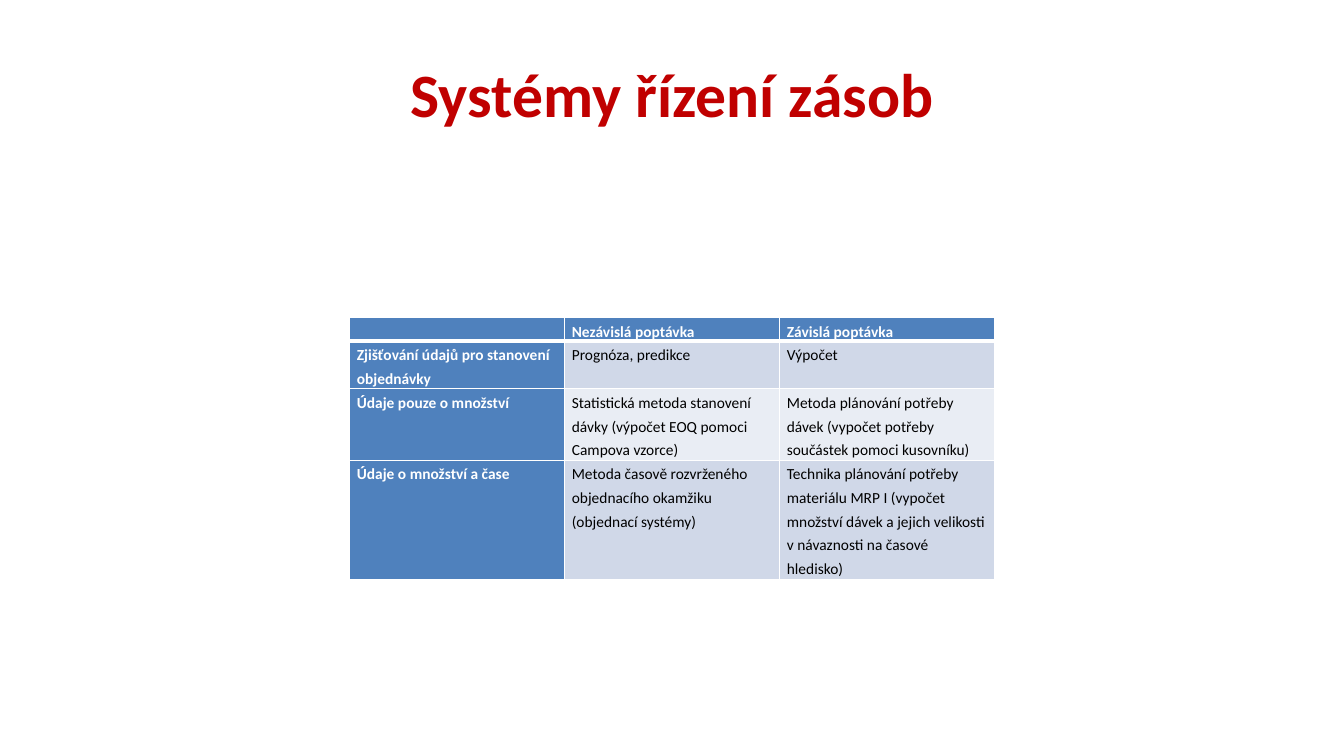
from lxml.etree import SubElement
from pptx import Presentation
from pptx.dml.color import RGBColor
from pptx.enum.text import MSO_ANCHOR as Anchor, PP_ALIGN as Align
from pptx.oxml.ns import qn
from pptx.util import Inches, Pt

FONT = "Calibri"
COLORS = {"title": "C00000", "header": "4F81BD", "odd": "D0D8E8",
          "even": "E9EDF4", "white": "FFFFFF", "black": "000000"}
LINE = 0.236  # height of one line of table text, in inches
ROW_LINES = [1, 2, 3, 5]
DEMAND = [
    ["", "Nezávislá poptávka", "Závislá poptávka"],
    ["Zjišťování údajů pro stanovení objednávky", "Prognóza, predikce", "Výpočet"],
    ["Údaje pouze o množství",
     "Statistická metoda stanovení dávky (výpočet EOQ pomoci Campova vzorce)",
     "Metoda plánování potřeby dávek (vypočet potřeby součástek pomoci kusovníku)"],
    ["Údaje o množství a čase",
     "Metoda časově rozvrženého objednacího okamžiku (objednací systémy)",
     "Technika plánování potřeby materiálu MRP I (vypočet množství dávek "
     "a jejich velikosti v návaznosti na časové hledisko)"],
]


def rgb(name):
    return RGBColor.from_string(COLORS[name])


def add_run(paragraph, text, size, color, bold):
    run = paragraph.add_run()
    run.text = text
    run.font.name, run.font.size, run.font.bold = FONT, Pt(size), bold
    run.font.color.rgb = rgb(color)


def add_title(slide, text, left, top, width, height):
    heading = slide.shapes.add_textbox(
        Inches(left), Inches(top), Inches(width), Inches(height)).text_frame
    heading.word_wrap = True
    heading.vertical_anchor = Anchor.MIDDLE
    heading.paragraphs[0].alignment = Align.CENTER
    add_run(heading.paragraphs[0], text, 44, "title", True)


def set_borders(cell, row):
    # A thick rule parts the header row from the body
    widths = {"L": 1, "R": 1, "T": 3 if row == 1 else 1, "B": 3 if row == 0 else 1}
    for side, width in widths.items():
        border = SubElement(cell._tc.get_or_add_tcPr(), qn(f"a:ln{side}"), w=str(Pt(width)))
        SubElement(SubElement(border, qn("a:solidFill")), qn("a:srgbClr"), val=COLORS["white"])


def fill_cell(cell, text, row, col):
    is_header = row == 0 or col == 0
    cell.margin_left = cell.margin_right = Inches(0.07)
    cell.margin_top = cell.margin_bottom = 0
    set_borders(cell, row)
    cell.fill.solid()
    cell.fill.fore_color.rgb = rgb("header" if is_header else "odd" if row % 2 else "even")
    paragraph = cell.text_frame.paragraphs[0]
    paragraph.line_spacing, paragraph.space_after = 1.25, Pt(10)
    if text:
        add_run(paragraph, text, 11, "white" if is_header else "black", is_header)
    else:
        # Keeps the empty corner cell as low as its row
        SubElement(paragraph._p, qn("a:endParaRPr"), sz="1100")


def add_demand_table(slide, rows, left, top, width):
    table = slide.shapes.add_table(
        len(rows), len(rows[0]), Inches(left), Inches(top),
        Inches(width), Inches(LINE * sum(ROW_LINES))).table
    for row, (texts, lines) in enumerate(zip(rows, ROW_LINES)):
        table.rows[row].height = Inches(LINE * lines)
        for col, text in enumerate(texts):
            fill_cell(table.cell(row, col), text, row, col)


def main():
    deck = Presentation()
    deck.slide_width, deck.slide_height = Inches(13.333), Inches(7.5)
    slide = deck.slides.add_slide(deck.slide_layouts[6])
    add_title(slide, "Systémy řízení zásob", 0.67, 0.3, 12, 1.25)
    add_demand_table(slide, DEMAND, 3.47, 3.15, 6.4)
    deck.save("out.pptx")


if __name__ == "__main__":
    main()
